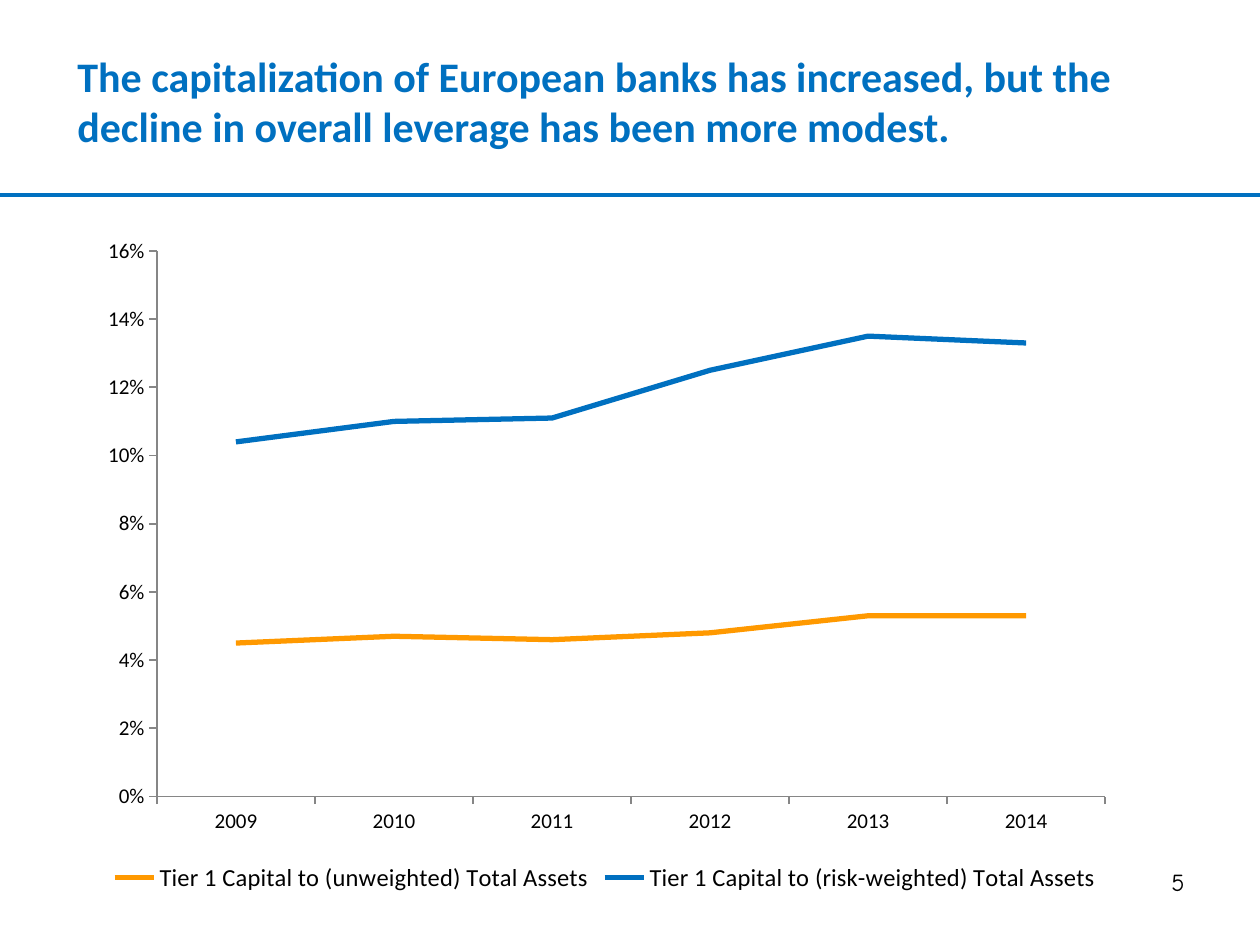
from dataclasses import dataclass

from lxml.etree import SubElement
from pptx import Presentation
from pptx.chart.data import CategoryChartData
from pptx.dml.color import RGBColor
from pptx.enum.chart import XL_CHART_TYPE, XL_LEGEND_POSITION, XL_TICK_MARK
from pptx.enum.shapes import MSO_CONNECTOR
from pptx.enum.text import MSO_ANCHOR, PP_ALIGN
from pptx.oxml import parse_xml
from pptx.oxml.ns import nsdecls, qn
from pptx.util import Pt


@dataclass(frozen=True)
class Theme:
    blue: RGBColor = RGBColor(0x00, 0x70, 0xC0)
    orange: RGBColor = RGBColor(0xFF, 0x99, 0x00)
    black: RGBColor = RGBColor(0, 0, 0)
    grey: RGBColor = RGBColor(0x86, 0x86, 0x86)
    font: str = "Calibri"
    number_font: str = "Comic Neue"
    title_size: int = 24
    text_size: int = 14
    axis_size: int = 12


THEME = Theme()
WIDTH, HEIGHT = 720, 540
YEARS = ["2009", "2010", "2011", "2012", "2013", "2014"]
SERIES = [
    ("Tier 1 Capital to (unweighted) Total Assets", THEME.orange,
     [0.045, 0.047, 0.046, 0.048, 0.053, 0.053]),
    ("Tier 1 Capital to (risk-weighted) Total Assets", THEME.blue,
     [0.104, 0.11, 0.111, 0.125, 0.135, 0.133]),
]


def style_font(font, size, color=THEME.black, name=THEME.font, bold=False):
    font.name, font.size, font.bold = name, Pt(size), bold
    font.color.rgb = color


def add_title(s, text, x, y, w, h):
    sp = s.shapes.title
    sp.left, sp.top, sp.width, sp.height = Pt(x), Pt(y), Pt(w), Pt(h)
    tf = sp.text_frame
    tf.word_wrap = True
    tf.vertical_anchor = MSO_ANCHOR.MIDDLE
    p = tf.paragraphs[0]
    p.alignment = PP_ALIGN.LEFT
    r = p.add_run()
    r.text = text
    style_font(r.font, THEME.title_size, THEME.blue, bold=True)


def add_rule(s, y):
    line = s.shapes.add_connector(MSO_CONNECTOR.STRAIGHT, 0, Pt(y), Pt(WIDTH), Pt(y))
    line.line.color.rgb = THEME.blue
    line.line.width = Pt(2)
    SubElement(line._element.spPr, qn("a:effectLst"))


def add_page_number(s, number, x, y, w, h):
    tf = s.shapes.add_textbox(Pt(x), Pt(y), Pt(w), Pt(h)).text_frame
    tf.word_wrap = True
    p = tf.paragraphs[0]
    p.alignment = PP_ALIGN.RIGHT
    r = p.add_run()
    r.text = number
    style_font(r.font, THEME.text_size, name=THEME.number_font)


def set_plot_layout(chart, x, y, w, h):
    """Fix the inner plot area, in fractions of the chart."""
    area = chart._chartSpace.chart.plotArea
    for old in area.findall(qn("c:layout")):
        area.remove(old)
    area.insert(0, parse_xml(
        f'<c:layout {nsdecls("c")}><c:manualLayout><c:layoutTarget val="inner"/>'
        '<c:xMode val="edge"/><c:yMode val="edge"/>'
        f'<c:x val="{x}"/><c:y val="{y}"/><c:w val="{w}"/><c:h val="{h}"/>'
        '</c:manualLayout></c:layout>'))


def style_axis(axis):
    axis.has_major_gridlines = False
    axis.major_tick_mark = XL_TICK_MARK.OUTSIDE
    axis.minor_tick_mark = XL_TICK_MARK.NONE
    axis.format.line.color.rgb = THEME.grey
    axis.format.line.width = Pt(1)
    style_font(axis.tick_labels.font, THEME.axis_size)


def add_capital_chart(s, x, y, w, h):
    data = CategoryChartData(number_format="0.0%")
    data.categories = YEARS
    for name, _, values in SERIES:
        data.add_series(name, values)
    chart = s.shapes.add_chart(XL_CHART_TYPE.LINE, Pt(x), Pt(y), Pt(w), Pt(h), data).chart
    chart.has_title = False
    style_font(chart.font, THEME.axis_size)
    set_plot_layout(chart, 0.07, 0.04, 0.91, 0.81)

    style_axis(chart.category_axis)
    axis = chart.value_axis
    style_axis(axis)
    axis.minimum_scale, axis.maximum_scale, axis.major_unit = 0, 0.16, 0.02
    axis.tick_labels.number_format = "0%"
    axis.tick_labels.number_format_is_linked = False

    chart.plots[0].vary_by_categories = False
    for series, (_, color, _) in zip(chart.plots[0].series, SERIES):
        series.smooth = False
        series.format.line.color.rgb = color
        series.format.line.width = Pt(3)

    chart.has_legend = True
    chart.legend.position = XL_LEGEND_POSITION.BOTTOM
    chart.legend.include_in_layout = False
    style_font(chart.legend.font, THEME.text_size)


def main():
    prs = Presentation()
    prs.slide_width, prs.slide_height = Pt(WIDTH), Pt(HEIGHT)
    s = prs.slides.add_slide(prs.slide_layouts[5])
    add_rule(s, 111.5)
    add_page_number(s, "5", 516, 492, 168, 37.5)
    add_title(s, "The capitalization of European banks has increased, "
                 "but the decline in overall leverage has been more modest.",
              37, 9.5, 652, 96)
    add_capital_chart(s, 48, 128, 595.5, 385)
    prs.save("out.pptx")


if __name__ == "__main__":
    main()
